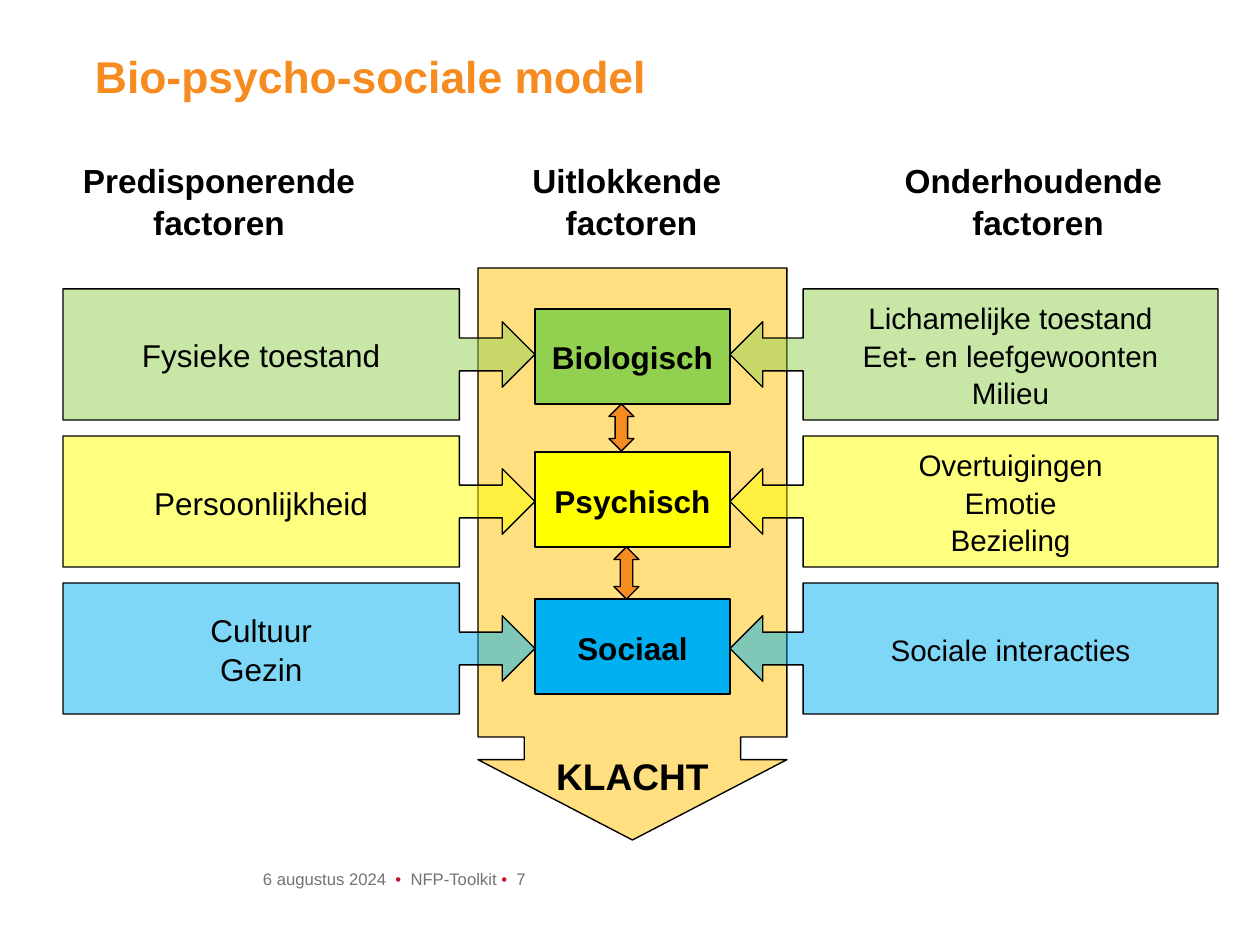
from lxml import etree
from pptx import Presentation
from pptx import util as u
from pptx.dml.color import RGBColor
from pptx.enum import shapes, text
from pptx.oxml.ns import qn

SHAPE = shapes.MSO_SHAPE
CENTER = text.PP_ALIGN.CENTER
BLACK, ORANGE, GREY, RED = "000000", "F68B1F", "727272", "C4122F"
GREEN, YELLOW, BLUE, AMBER = "92D050", "FFFF00", "00B0F0", "FFC000"


def px(n):
    return u.Emu(n * 6858)


def color(value):
    return RGBColor.from_string(value)


class ModelSlide:
    font = "Arial"
    line_width = u.Pt(0.75)
    line_spacing = 1.05

    def __init__(self, prs):
        self.slide = prs.slides.add_slide(prs.slide_layouts[6])

    def style(self, paragraph, size, bold=False, ink=BLACK, align=None):
        paragraph.alignment = align
        paragraph.line_spacing = self.line_spacing
        font = paragraph.font
        font.name, font.size, font.bold = self.font, u.Pt(size), bold
        font.color.rgb = color(ink)

    def fill_lines(self, frame, lines, **style):
        for i, line in enumerate(lines):
            paragraph = frame.add_paragraph() if i else frame.paragraphs[0]
            paragraph.text = line
            self.style(paragraph, **style)

    def frame(self, box, wrap=True, insets=None):
        frame = self.slide.shapes.add_textbox(*map(px, box)).text_frame
        frame.word_wrap = wrap
        if insets:
            (frame.margin_left, frame.margin_top,
             frame.margin_right, frame.margin_bottom) = map(px, insets)
        return frame

    def label(self, box, lines, wrap=False, insets=None, **style):
        self.fill_lines(self.frame(box, wrap, insets), lines, **style)

    def block(self, kind, box, fill, adjust=(), alpha=None, lines=(), **style):
        shape = self.slide.shapes.add_shape(kind, *map(px, box))
        shape.shadow.inherit = False
        for i, value in enumerate(adjust):
            shape.adjustments[i] = value
        shape.fill.solid()
        shape.fill.fore_color.rgb = color(fill)
        if alpha:
            tint = shape.element.spPr.find(qn("a:solidFill"))[0]
            etree.SubElement(tint, qn("a:alpha")).set("val", str(alpha * 1000))
        shape.line.color.rgb = color(BLACK)
        shape.line.width = self.line_width
        shape.text_frame.vertical_anchor = text.MSO_ANCHOR.MIDDLE
        self.fill_lines(shape.text_frame, lines, align=CENTER, **style)

    def footer(self, box, parts, size):
        frame = self.frame(box, insets=(0, 0, 0, 7))
        frame.vertical_anchor = text.MSO_ANCHOR.BOTTOM
        paragraph = frame.paragraphs[0]
        self.style(paragraph, size)
        for words, ink in parts:
            run = paragraph.add_run()
            run.text = words
            run.font.color.rgb = color(ink)


def main():
    prs = Presentation()
    prs.slide_width, prs.slide_height = px(1260), px(945)
    model = ModelSlide(prs)

    # Title and footer
    model.label((95, 46, 1070, 131), ["Bio-psycho-sociale model"], wrap=True,
                insets=(0, 0, 0, 0), size=24, bold=True, ink=ORANGE)
    model.footer((263, 861, 903, 35), [
        ("6 augustus 2024  ", GREY), ("• ", RED), (" NFP-Toolkit ", GREY),
        ("•  ", RED), ("7", GREY)], size=9)

    # Column headings
    for left, width, heading in [(68, 302, "Predisponerende"),
                                 (518, 227, "Uitlokkende "),
                                 (890, 296, "Onderhoudende ")]:
        model.label((left, 152, width, 95), [heading, "factoren"],
                    size=18, bold=True, align=CENTER)

    # Central arrow leading to the complaint
    model.block(SHAPE.DOWN_ARROW_CALLOUT, (478, 268, 309, 572), AMBER,
                adjust=(0.7, 0.5, 0.26, 0.82), alpha=50)
    model.label((542, 745, 181, 59), ["KLACHT"], size=20, bold=True, align=CENTER)

    # One row per domain: predisposing, triggering, maintaining
    domains = [
        ("Biologisch", 309, GREEN, ["Fysieke toestand"],
         ["Lichamelijke toestand", "Eet- en leefgewoonten", "Milieu"]),
        ("Psychisch", 452, YELLOW, ["Persoonlijkheid"],
         ["Overtuigingen", "Emotie", "Bezieling"]),
        ("Sociaal", 599, BLUE, ["Cultuur", "Gezin"], ["Sociale interacties"]),
    ]
    for row, (domain, top, fill, predisposing, maintaining) in enumerate(domains):
        row_top = 289 + 147 * row
        model.block(SHAPE.RECTANGLE, (535, top, 195, 95), fill,
                    lines=[domain], size=17, bold=True)
        model.block(SHAPE.RIGHT_ARROW_CALLOUT, (63, row_top, 472, 131), fill,
                    adjust=(0.25, 0.25, 0.25, 0.84), alpha=50,
                    lines=predisposing, size=17)
        model.block(SHAPE.LEFT_ARROW_CALLOUT, (730, row_top, 488, 131), fill,
                    adjust=(0.25, 0.25, 0.25, 0.85), alpha=50,
                    lines=maintaining, size=16)

    # Interaction between the domains
    for left, top, height in [(609, 404, 47), (614, 547, 52)]:
        model.block(SHAPE.UP_DOWN_ARROW, (left, top, 25, height), ORANGE,
                    adjust=(0.5, 0.5))

    prs.save("out.pptx")


if __name__ == "__main__":
    main()
